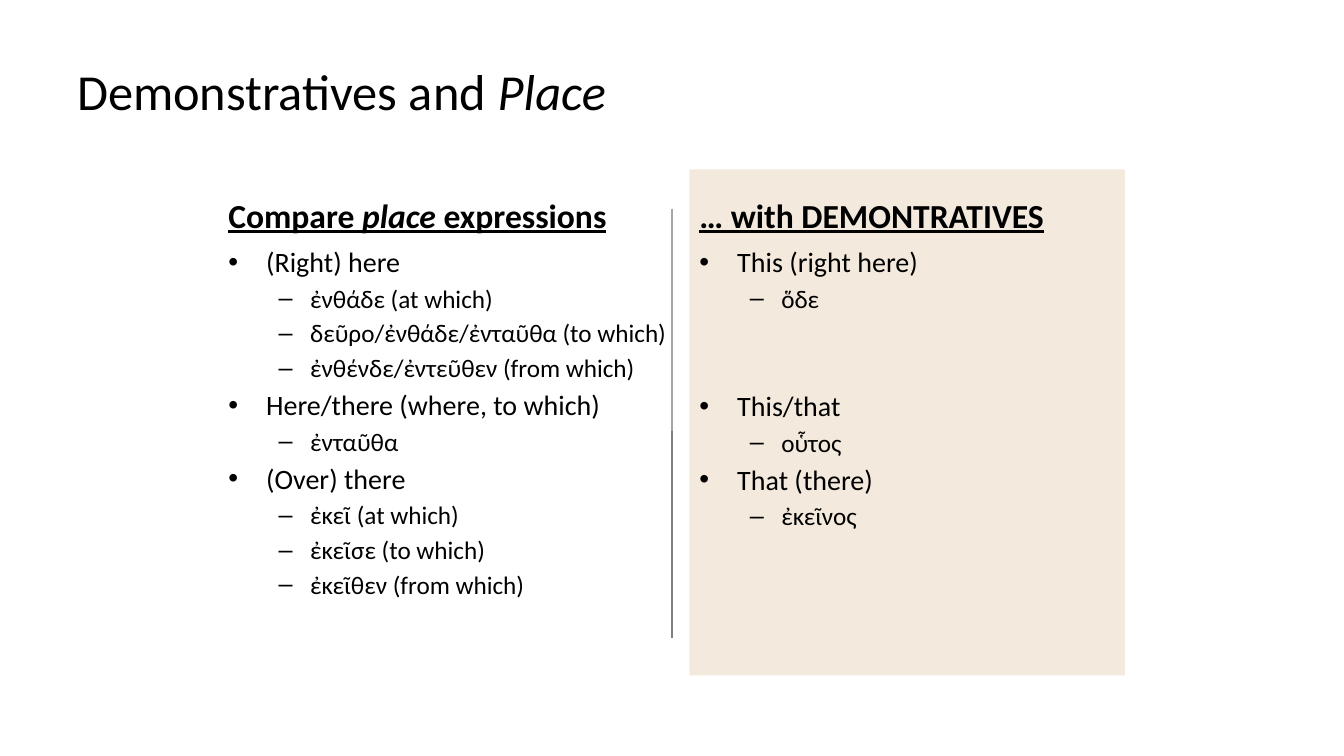
import pptx
import pptx.dml.color
import pptx.enum.shapes
import pptx.enum.text
import pptx.util
from lxml import etree

Pt = pptx.util.Pt
ANCHOR = pptx.enum.text.MSO_ANCHOR
BLACK, CREAM = "000000", "F3EADD"
A = "{http://schemas.openxmlformats.org/drawingml/2006/main}"

# level: bullet, left margin, hanging indent, text size, space before
LEVELS = {
    0: ("•", 27, 27, 20, 3.7),
    1: ("–", 58.5, 22.5, 18, 3.2),
}
SKIPPED_LINES = 50.3  # two level 1 lines, so that rows match across columns

columns = [
    (156, 337, None,
     [("Compare ", False), ("place", True), (" expressions", False)],
     [(0, "(Right) here", 0),
      (1, "ἐνθάδε (at which)", 0),
      (1, "δεῦρο/ἐνθάδε/ἐνταῦθα (to which)", 0),
      (1, "ἐνθένδε/ἐντεῦθεν (from which)", 0),
      (0, "Here/there (where, to which)", 0),
      (1, "ἐνταῦθα", 0),
      (0, "(Over) there", 0),
      (1, "ἐκεῖ (at which)", 0),
      (1, "ἐκεῖσε (to which)", 0),
      (1, "ἐκεῖθεν (from which)", 0)]),
    (492.5, 311, CREAM,
     [("… with DEMONTRATIVES", False)],
     [(0, "This (right here)", 0),
      (1, "ὅδε", 0),
      (0, "This/that", SKIPPED_LINES),
      (1, "οὗτος", 0),
      (0, "That (there)", 0),
      (1, "ἐκεῖνος", 0)]),
]


def rgb(color):
    return pptx.dml.color.RGBColor.from_string(color)


def add_box(left, top, width, height, anchor, runs, size, fill=None, strong=False):
    """Add a text box whose first paragraph holds (text, italic) runs."""
    sp = s.shapes.add_textbox(Pt(left), Pt(top), Pt(width), Pt(height))
    if fill:
        sp.fill.solid()
        sp.fill.fore_color.rgb = rgb(fill)
    tf = sp.text_frame
    tf.word_wrap = True
    tf.vertical_anchor = anchor
    for text, italic in runs:
        r = tf.paragraphs[0].add_run()
        r.text = text
        r.font.name = "Calibri"
        r.font.size = Pt(size)
        r.font.italic = italic
        r.font.bold = r.font.underline = strong
        r.font.color.rgb = rgb(BLACK)
    return tf


prs = pptx.Presentation()
prs.slide_width, prs.slide_height = Pt(960), Pt(540)
s = prs.slides.add_slide(prs.slide_layouts[6])

# Divider between the columns
for top, bottom, color, weight in [(150, 456, "808080", 2), (149, 308, "A6A6A6", 1.5)]:
    line = s.shapes.add_connector(
        pptx.enum.shapes.MSO_CONNECTOR.STRAIGHT, Pt(480), Pt(top), Pt(480), Pt(bottom))
    line.line.color.rgb = rgb(color)
    line.line.width = Pt(weight)
    etree.SubElement(line._element.spPr, A + "effectLst")

add_box(48, 6, 864, 84, ANCHOR.BOTTOM,
        [("Demonstratives and ", False), ("Place", True)], 36)

for left, width, fill, heading, items in columns:
    add_box(left, 121, width, 50.4, ANCHOR.BOTTOM, heading, 24, fill, strong=True)
    tf = add_box(left, 171.4, width, 311, ANCHOR.TOP, [], 20, fill)
    for i, (level, text, gap) in enumerate(items):
        bullet, margin, hanging, size, before = LEVELS[level]
        p = tf.add_paragraph() if i else tf.paragraphs[0]
        p.level = level
        if i:
            p.space_before = Pt(before + gap)
        pPr = p._p.get_or_add_pPr()
        pPr.set("marL", str(Pt(margin)))
        pPr.set("indent", str(-Pt(hanging)))
        etree.SubElement(pPr, A + "buFont", typeface="Arial")
        etree.SubElement(pPr, A + "buChar", char=bullet)
        r = p.add_run()
        r.text = text
        r.font.name = "Calibri"
        r.font.size = Pt(size)
        r.font.color.rgb = rgb(BLACK)

prs.save("out.pptx")
